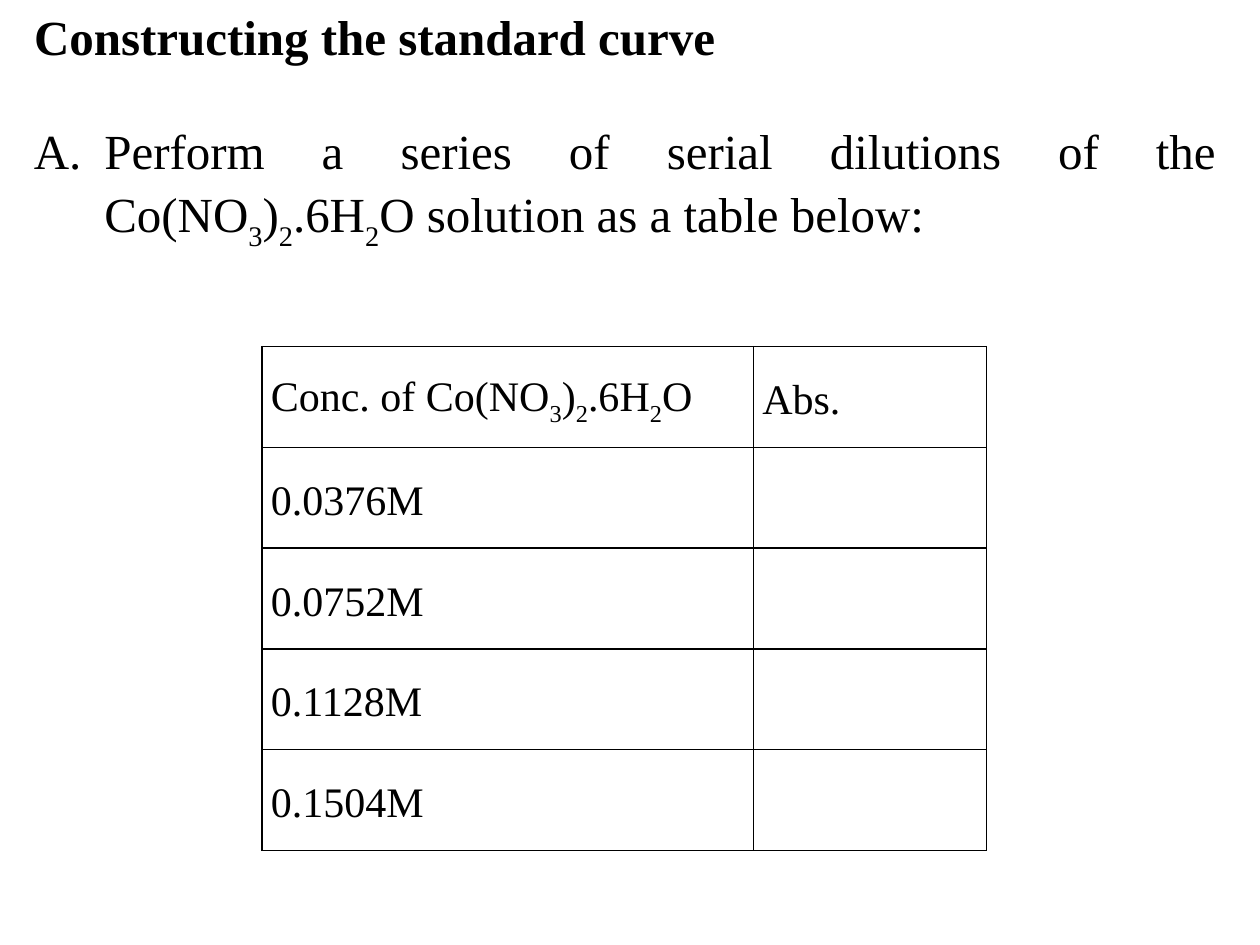
from lxml import etree
from pptx import Presentation
from pptx.dml.color import RGBColor
from pptx.enum.text import MSO_ANCHOR, PP_ALIGN
from pptx.oxml.ns import qn
from pptx.util import Inches, Pt

FORMULA = ["3", ")", "2", ".6H", "2"]


def color(value):
    return RGBColor.from_string(value)


def write(para, pieces, size, offset="0", bold=False):
    para.font.name = "Times New Roman"
    para.font.size = Pt(size)
    para.font.bold = bold
    para.font.color.rgb = color("000000")
    for piece in pieces:
        span = para.add_run()
        span.text = piece
        if piece in ("2", "3"):
            span.font._element.set("baseline", offset)


deck = Presentation()
deck.slide_width = Inches(10)
deck.slide_height = Inches(7.5)
page = deck.slides.add_slide(deck.slide_layouts[5])

title = page.shapes.title
title.left, title.top = Inches(0.17), Inches(0.01)
title.width, title.height = Inches(9.58), Inches(0.55)
title.text_frame.vertical_anchor = MSO_ANCHOR.MIDDLE
heading = title.text_frame.paragraphs[0]
heading.alignment = PP_ALIGN.LEFT
write(heading, ["Constructing the standard curve"], 28, bold=True)

box = page.shapes.add_textbox(Inches(0.17), Inches(0.94), Inches(9.58), Inches(1.06))
box.text_frame.word_wrap = True
box.text_frame.vertical_anchor = MSO_ANCHOR.MIDDLE
step = box.text_frame.paragraphs[0]
step.alignment = PP_ALIGN.JUSTIFY
step.line_spacing = 1.05
properties = step._p.get_or_add_pPr()
properties.set("marL", str(Inches(0.56)))
properties.set("indent", str(-Inches(0.56)))
etree.SubElement(properties, qn("a:buAutoNum"), type="alphaUcPeriod")
write(step, ["Perform a series of serial dilutions of the Co(NO", *FORMULA,
             "O solution as a table below:"], 28, "-30000")

rows = [
    [["Conc. of Co(NO", *FORMULA, "O"], ["Abs."]],
    [["0.0376M"], []],
    [["0.0752M"], []],
    [["0.1128M"], []],
    [["0.1504M"], []],
]
table = page.shapes.add_table(len(rows), 2, Inches(2.08), Inches(2.75),
                              Inches(5.75), Inches(4)).table
table.first_row = False
table.horz_banding = False
table.columns[0].width = Inches(3.9)
table.columns[1].width = Inches(1.85)

for row_index, row in enumerate(rows):
    table.rows[row_index].height = Inches(0.8)
    for column_index, pieces in enumerate(row):
        cell = table.cell(row_index, column_index)
        cell.vertical_anchor = MSO_ANCHOR.MIDDLE
        cell.margin_left = cell.margin_right = Inches(0.07)
        cell.margin_top = cell.margin_bottom = 0
        para = cell.text_frame.paragraphs[0]
        para.alignment = PP_ALIGN.JUSTIFY
        para.line_spacing = 1.15
        write(para, pieces, 24, "-25000")
        borders = cell._tc.get_or_add_tcPr()
        for side in ("lnL", "lnR", "lnT", "lnB"):
            line = etree.SubElement(borders, qn(f"a:{side}"), w=str(Pt(1)))
            paint = etree.SubElement(line, qn("a:solidFill"))
            etree.SubElement(paint, qn("a:srgbClr"), val="000000")
        cell.fill.background()

deck.save("out.pptx")
